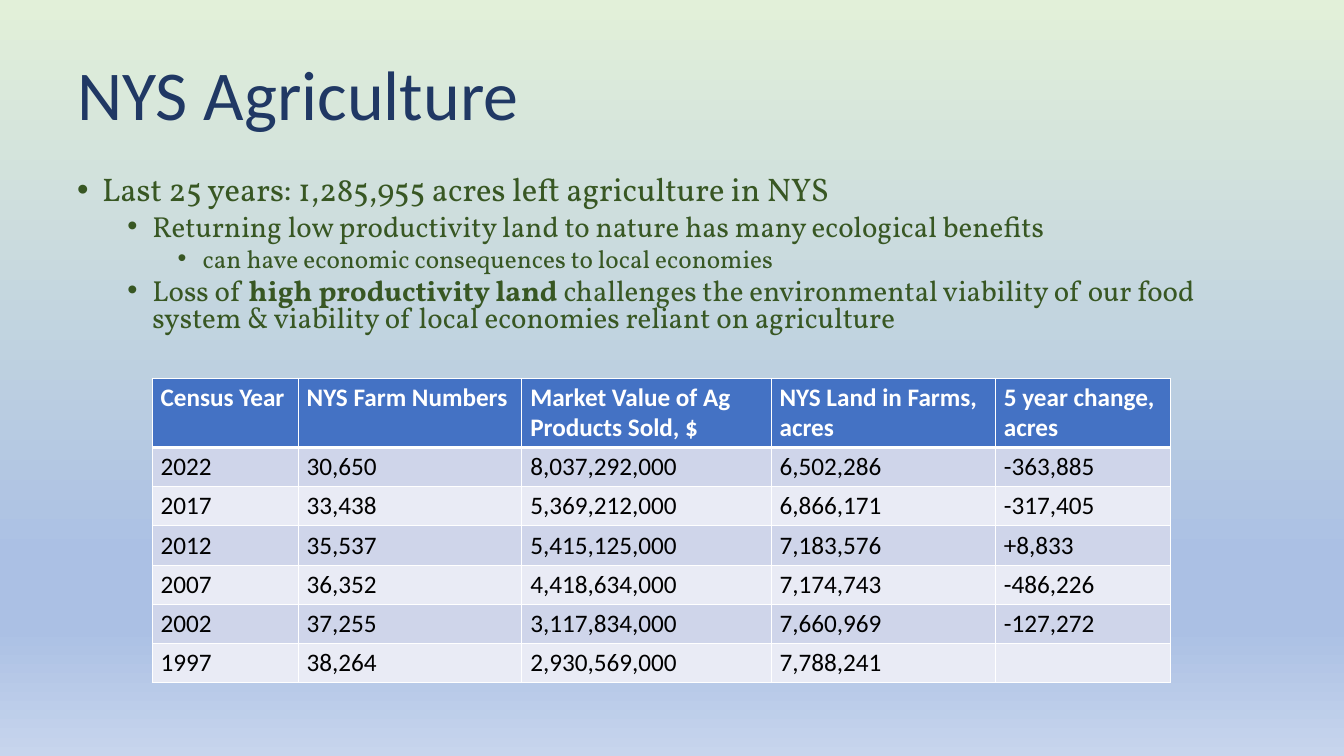
from pptx import Presentation
from pptx.dml.color import RGBColor
from pptx.enum.text import MSO_ANCHOR, MSO_AUTO_SIZE, PP_ALIGN
from pptx.oxml import parse_xml
from pptx.oxml.ns import nsdecls
from pptx.util import Cm, Pt

TITLE = "NYS Agriculture"
BULLETS = [
    (0, [("Last 25 years: 1,285,955 acres left agriculture in NYS", False)]),
    (1, [("Returning low productivity land to nature has many ecological benefits", False)]),
    (2, [("can have economic consequences to local economies", False)]),
    (1, [
        ("Loss of ", False),
        ("high productivity land ", True),
        ("challenges the environmental viability of our food system & viability "
         "of local economies reliant on agriculture", False),
    ]),
]
CENSUS = [
    ("Census Year", "NYS Farm Numbers", "Market Value of Ag Products Sold, $",
     "NYS Land in Farms, acres", "5 year change, acres"),
    ("2022", "30,650", "8,037,292,000", "6,502,286", "-363,885"),
    ("2017", "33,438", "5,369,212,000", "6,866,171", "-317,405"),
    ("2012", "35,537", "5,415,125,000", "7,183,576", "+8,833"),
    ("2007", "36,352", "4,418,634,000", "7,174,743", "-486,226"),
    ("2002", "37,255", "3,117,834,000", "7,660,969", "-127,272"),
    ("1997", "38,264", "2,930,569,000", "7,788,241", ""),
]
COLUMN_WIDTHS = [4.42, 6.76, 7.54, 6.78, 5.28]
HEADER_HEIGHT, ROW_HEIGHT = 2.07, 1.17
HEADER_FILL, BAND_FILLS = "4472C4", ("E9EBF5", "CFD5EA")
BACKGROUND_STOPS = [(0, "E2F0D9"), (74, "ABC0E4"), (83, "ABC0E4"), (100, "C7D5ED")]
BULLET_SIZES = [28, 24.8, 21.6]
TITLE_FONT = {"name": "Calibri", "size": Pt(60), "color": "203864"}
BULLET_FONT = {"name": "Vollkorn", "color": "385723"}
CELL_FONT = {"name": "Calibri", "size": Pt(21.6)}


def rgb(color):
    return RGBColor.from_string(color)


def set_font(font, **values):
    for name, value in values.items():
        if name == "color":
            font.color.rgb = rgb(value)
        else:
            setattr(font, name, value)


def set_background(slide):
    fill = slide.background.fill
    fill.gradient()
    fill.gradient_angle = 270
    stops = "".join(
        f'<a:gs pos="{percent * 1000}"><a:srgbClr val="{color}"/></a:gs>'
        for percent, color in BACKGROUND_STOPS)
    stop_list = slide.background._cSld.find(".//{*}gsLst")
    stop_list.getparent().replace(
        stop_list, parse_xml(f'<a:gsLst {nsdecls("a")}>{stops}</a:gsLst>'))


def add_title(slide):
    title = slide.shapes.title
    title.left, title.top, title.width, title.height = Cm(2.08), Cm(1.7), Cm(36.47), Cm(3.81)
    frame = title.text_frame
    frame.auto_size = MSO_AUTO_SIZE.NONE
    frame.vertical_anchor = MSO_ANCHOR.TOP
    frame.text = TITLE
    paragraph = frame.paragraphs[0]
    paragraph.alignment = PP_ALIGN.LEFT
    paragraph.line_spacing = 0.9
    set_font(paragraph.runs[0].font, **TITLE_FONT)


def add_bullets(slide):
    frame = slide.shapes.add_textbox(Cm(2.08), Cm(5.13), Cm(35.84), Cm(5.82)).text_frame
    frame.word_wrap = True
    for index, (level, runs) in enumerate(BULLETS):
        paragraph = frame.add_paragraph() if index else frame.paragraphs[0]
        paragraph.level = level
        properties = paragraph._p.get_or_add_pPr()
        properties.set("marL", str(Cm(0.76 + 1.52 * level)))
        properties.set("indent", str(-Cm(0.76)))
        properties.append(parse_xml(f'<a:buFont {nsdecls("a")} typeface="Arial"/>'))
        properties.append(parse_xml(f'<a:buChar {nsdecls("a")} char="•"/>'))
        paragraph.line_spacing = 0.77 if index else 0.9
        paragraph.space_before = Pt(6 if index else 0)
        for text, bold in runs:
            run = paragraph.add_run()
            run.text = text
            set_font(run.font, size=Pt(BULLET_SIZES[level]), bold=bold, **BULLET_FONT)


def set_borders(cell, row):
    widths = {"L": 1, "R": 1, "T": 3 if row == 1 else 1, "B": 3 if row == 0 else 1}
    properties = cell._tc.get_or_add_tcPr()
    for side, width in widths.items():
        properties.append(parse_xml(
            f'<a:ln{side} {nsdecls("a")} w="{Pt(width)}"><a:solidFill>'
            f'<a:srgbClr val="FFFFFF"/></a:solidFill></a:ln{side}>'))


def add_census_table(slide):
    heights = [HEADER_HEIGHT] + [ROW_HEIGHT] * (len(CENSUS) - 1)
    table = slide.shapes.add_table(
        len(CENSUS), len(COLUMN_WIDTHS), Cm(4.6), Cm(11.43),
        Cm(sum(COLUMN_WIDTHS)), Cm(sum(heights))).table
    for column, width in zip(table.columns, COLUMN_WIDTHS):
        column.width = Cm(width)
    for row, (values, height) in enumerate(zip(CENSUS, heights)):
        table.rows[row].height = Cm(height)
        header = row == 0
        for column, value in enumerate(values):
            cell = table.cell(row, column)
            set_borders(cell, row)
            cell.fill.solid()
            cell.fill.fore_color.rgb = rgb(HEADER_FILL if header else BAND_FILLS[row % 2])
            cell.text = value
            for run in cell.text_frame.paragraphs[0].runs:
                set_font(run.font, bold=header,
                         color="FFFFFF" if header else "000000", **CELL_FONT)


def main():
    presentation = Presentation()
    presentation.slide_width, presentation.slide_height = Cm(40.64), Cm(22.86)
    slide = presentation.slides.add_slide(presentation.slide_layouts[5])
    set_background(slide)
    add_title(slide)
    add_census_table(slide)
    add_bullets(slide)
    presentation.save("out.pptx")


if __name__ == "__main__":
    main()
